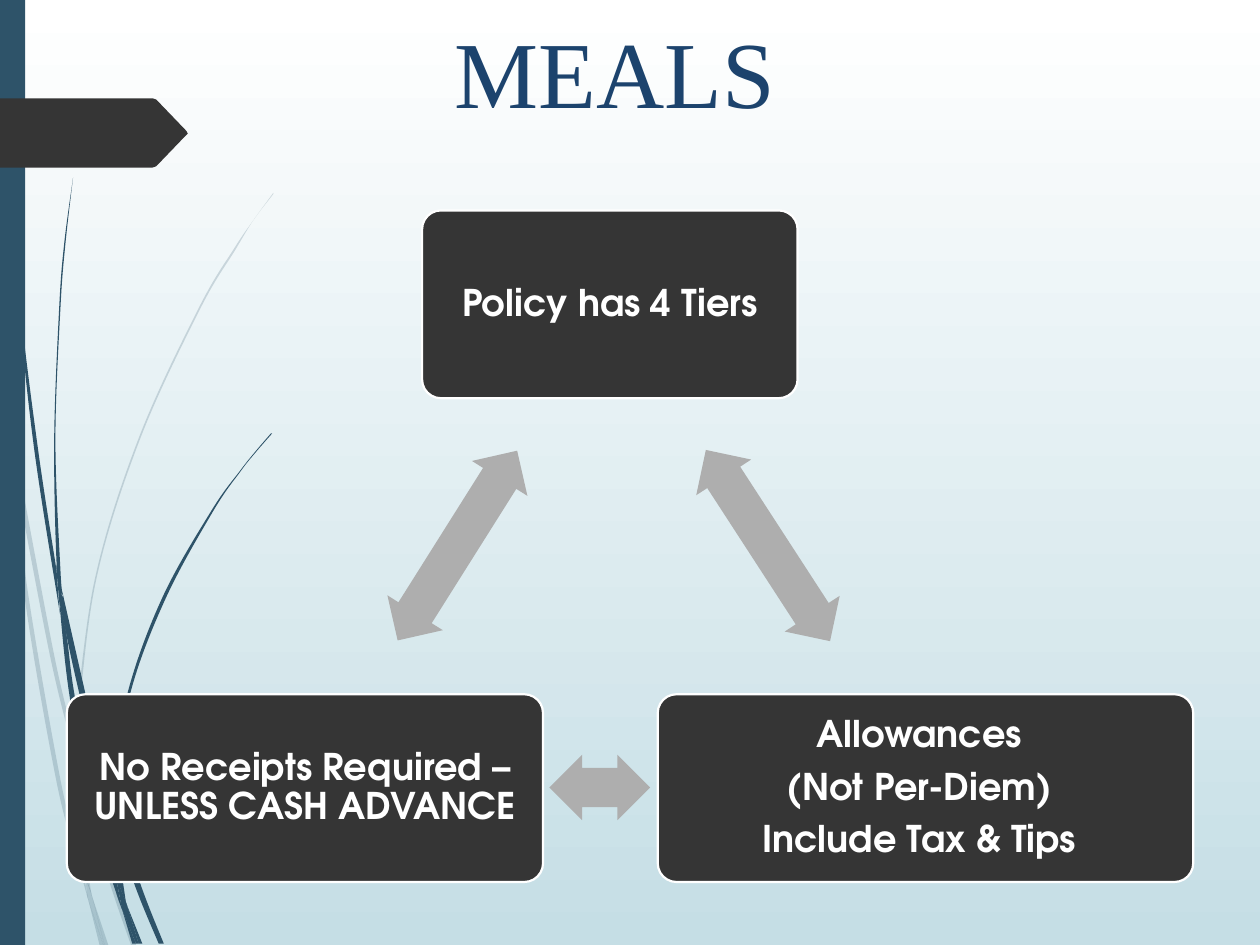
import pptx
import pptx.util
import pptx.dml.color
import pptx.enum.shapes
import pptx.enum.text
import pptx.oxml.ns
from lxml import etree

Inches = pptx.util.Inches
qn = pptx.oxml.ns.qn
SHAPES = pptx.enum.shapes.MSO_SHAPE
ANCHOR = pptx.enum.text.MSO_ANCHOR
CENTER = pptx.enum.text.PP_ALIGN.CENTER

THEME = {
    "teal": "2E5369", "dark": "353535", "arrow": "AEAEAE", "white": "FFFFFF",
    "sky": "C5DEE5", "title": "1C436D",
    "title_font": "Times New Roman", "body_font": "TeX Gyre Adventor",
    "title_size": 54, "body_size": 21, "paragraph_gap": 7.35, "outline": 1.25,
}

TITLE = "MEALS"
BOX_TOP, BOX_HEIGHT, BOX_INSET = 5.51, 1.49, 0.14
BOXES = [
    {"left": 3.35, "top": 1.67, "width": 2.98, "right": BOX_INSET,
     "lines": ["Policy has 4 Tiers"]},
    {"left": 5.22, "top": BOX_TOP, "width": 4.25, "right": BOX_INSET + 0.1,
     "lines": ["Allowances", "(Not Per-Diem)", "Include Tax & Tips"]},
    {"left": 0.53, "top": BOX_TOP, "width": 3.78, "right": BOX_INSET,
     "lines": ["No Receipts Required – UNLESS CASH ADVANCE"]},
]
ARROW_HEIGHT = 0.52
ARROWS = [(5.19, 4.07, 1.81, 57), (4.36, 5.99, 0.8, 180), (2.74, 4.07, 1.78, 302.2)]

PALE_RIBBONS = [
    ([(0.08, 3.5), (0.06, 3.22), (0, 2.82)], [(0, 2.99), (0.07, 3.44), (0.08, 3.5)]),
    ([(0.1, 3.45), (0.43, 5.2), (0.59, 5.86)], [(0.59, 5.99), (0.4, 5.22), (0.12, 3.76)]),
    ([(0.61, 5.96), (0.64, 6.07), (0.88, 6.92), (1.08, 7.5)],
     [(1.04, 7.5), (0.85, 6.94), (0.61, 6.1)]),
    ([(0.83, 7.5), (0.86, 7.5)], [(0.73, 7.11)]),
    ([(0.08, 3.5), (0.12, 3.76), (0.22, 4.69), (0.48, 6.19), (0.64, 6.83), (0.7, 7.14)],
     [(0.64, 6.93), (0.45, 6.21), (0.19, 4.7), (0.08, 3.5)]),
    ([(0.58, 5.99), (0.6, 6.46), (0.64, 6.83), (0.73, 7.11)],
     [(0.72, 7.06), (0.63, 6.46), (0.61, 6.1), (0.58, 5.99)]),
    ([(0.61, 5.96), (0.61, 5.84), (0.76, 4.62), (1.11, 3.49), (1.59, 2.45),
      (1.87, 1.98), (2.01, 1.75), (2.17, 1.54)],
     [(2.17, 1.53), (2.01, 1.75), (1.86, 1.97), (1.58, 2.44), (1.1, 3.48),
      (0.75, 4.61), (0.59, 5.84)]),
    ([(0.7, 7.14), (0.79, 7.5)], [(0.82, 7.5)]),
    ([(0.65, 6.83), (0.69, 7.07), (0.7, 7.14), (0.82, 7.5)],
     [(0.83, 7.5), (0.73, 7.11), (0.67, 6.92), (0.65, 6.83)]),
]
DARK_RIBBONS = [
    ([(0.02, 0), (0.03, 0.48), (0.05, 1.1), (0.14, 2.33), (0.27, 3.55), (0.46, 4.77),
      (0.47, 4.81)],
     [(0.45, 4.53), (0.3, 3.55), (0.15, 2.32), (0.06, 1.09), (0.04, 0.48), (0.03, 0)]),
    ([(0.5, 4.72), (0.53, 5.05), (0.73, 5.92), (0.88, 6.45)],
     [(0.88, 6.31), (0.77, 5.9), (0.5, 4.72)]),
    ([(0.91, 6.41), (0.91, 6.56), (1.09, 7.08), (1.26, 7.49)],
     [(1.3, 7.49), (1.13, 7.06), (0.94, 6.49), (0.91, 6.41)]),
    ([(0.47, 4.77), (0.56, 5.57), (0.77, 6.59), (0.92, 7.08), (0.97, 7.22)],
     [(0.91, 6.91), (0.81, 6.57), (0.6, 5.56), (0.53, 5.05), (0.47, 4.77)]),
    ([(0.5, 4.72), (0.48, 4.53), (0.44, 3.49), (0.48, 2.44), (0.52, 1.93), (0.58, 1.41)],
     [(0.58, 1.41), (0.51, 1.93), (0.47, 2.44), (0.43, 3.49), (0.45, 4.49), (0.49, 4.72)]),
    ([(1.1, 7.49), (1.13, 7.49)], [(1.01, 7.19)]),
    ([(0.47, 4.77), (0.53, 5.05)], [(0.5, 4.72), (0.49, 4.72), (0.45, 4.49), (0.45, 4.53)]),
    ([(0.91, 6.41), (0.91, 6.33), (1.03, 5.52), (1.31, 4.76), (1.69, 4.06),
      (1.91, 3.74), (2.03, 3.59), (2.16, 3.44)],
     [(2.15, 3.44), (2.03, 3.58), (1.91, 3.73), (1.68, 4.05), (1.29, 4.74),
      (1.01, 5.51), (0.88, 6.31)]),
    ([(0.97, 7.22), (1.05, 7.49)], [(1.08, 7.49)]),
    ([(0.88, 6.45), (0.91, 6.91), (0.96, 7.06), (1.01, 7.19)],
     [(1, 7.16), (0.91, 6.56), (0.88, 6.45)]),
    ([(0.91, 6.91), (0.96, 7.17), (0.97, 7.22), (1.08, 7.49)],
     [(1.1, 7.49), (1.01, 7.19), (0.96, 7.06), (0.91, 6.91)]),
]
TAB = [(0, 0.78), (1.21, 0.78), (1.24, 0.79), (1.48, 1.04), (1.49, 1.06), (1.48, 1.07),
       (1.24, 1.32), (1.21, 1.33), (0, 1.33)]


def color(name):
    return pptx.dml.color.RGBColor.from_string(THEME[name])


def paint(shape, fill, outline=None):
    shape.shadow.inherit = False
    shape.fill.solid()
    shape.fill.fore_color.rgb = color(fill)
    if outline:
        shape.line.color.rgb = color(outline)
        shape.line.width = pptx.util.Pt(THEME["outline"])
    else:
        shape.line.fill.background()


def curve_points(points):
    padded = [points[0], *points, points[-1]]
    result = []
    for before, start, end, after in zip(padded, padded[1:], padded[2:], padded[3:]):
        result.append(tuple(b + (c - a) / 6 for a, b, c in zip(before, start, end)))
        result.append(tuple(c - (d - b) / 6 for b, c, d in zip(start, end, after)))
        result.append(end)
    return result


def add_outline(slide, points, fill):
    corners = [(Inches(x), Inches(y)) for x, y in points]
    builder = slide.shapes.build_freeform(*corners[0])
    builder.add_line_segments(corners[1:], close=True)
    shape = builder.convert_to_shape()
    paint(shape, fill)
    return shape


def add_ribbon(slide, side, opposite):
    bridge = [side[-1], opposite[0], opposite[0]]
    points = [side[0], *curve_points(side), *bridge, *curve_points(opposite)]
    shape = add_outline(slide, points, "teal")
    lines = list(shape.element.iter(qn("a:lnTo")))[:len(points) - 1]
    for first, second, third in zip(lines[::3], lines[1::3], lines[2::3]):
        curve = etree.Element(qn("a:cubicBezTo"))
        first.addprevious(curve)
        for line in (first, second, third):
            curve.append(line[0])
            line.getparent().remove(line)
    return shape


def add_ribbons(slide, ribbons, opacity=None):
    for side, opposite in ribbons:
        shape = add_ribbon(slide, side, opposite)
        if opacity:
            tint = shape.element.spPr.find(".//" + qn("a:srgbClr"))
            alpha = etree.SubElement(tint, qn("a:alpha"))
            alpha.set("val", str(opacity * 1000))


def add_shape(slide, kind, left, top, width, height):
    return slide.shapes.add_shape(
        kind, Inches(left), Inches(top), Inches(width), Inches(height))


def set_font(paragraph, role, ink, bold):
    paragraph.alignment = CENTER
    paragraph.font.name = THEME[role + "_font"]
    paragraph.font.size = pptx.util.Pt(THEME[role + "_size"])
    paragraph.font.color.rgb = color(ink)
    paragraph.font.bold = bold


def add_box(slide, box):
    shape = add_shape(slide, SHAPES.ROUNDED_RECTANGLE,
                      box["left"], box["top"], box["width"], BOX_HEIGHT)
    shape.adjustments[0] = 0.1
    paint(shape, "dark", "white")
    frame = shape.text_frame
    frame.word_wrap = True
    frame.vertical_anchor = ANCHOR.MIDDLE
    frame.margin_left = frame.margin_top = frame.margin_bottom = Inches(BOX_INSET)
    frame.margin_right = Inches(box["right"])
    frame.text = "\n".join(box["lines"])
    for paragraph in frame.paragraphs:
        set_font(paragraph, "body", "white", True)
        paragraph.line_spacing = 0.9
        paragraph.space_after = pptx.util.Pt(THEME["paragraph_gap"])


def add_title(slide):
    title = slide.shapes.title
    title.left, title.top, title.width, title.height = map(Inches, (0.38, 0.06, 9, 1.25))
    frame = title.text_frame
    frame.text = TITLE
    frame.vertical_anchor = ANCHOR.TOP
    frame.margin_top = Inches(0.05)
    set_font(frame.paragraphs[0], "title", "title", False)


def main():
    presentation = pptx.Presentation()
    presentation.slide_width, presentation.slide_height = Inches(10), Inches(7.5)
    slide = presentation.slides.add_slide(presentation.slide_layouts[5])
    background = slide.background.fill
    background.gradient()
    background.gradient_angle = 270
    for stop, name in zip(background.gradient_stops, ("white", "sky")):
        stop.color.rgb = color(name)
    add_ribbons(slide, PALE_RIBBONS, opacity=20)
    add_ribbons(slide, DARK_RIBBONS)
    paint(add_shape(slide, SHAPES.RECTANGLE, 0, 0, 0.2, 7.5), "teal")
    add_outline(slide, TAB, "dark")
    add_title(slide)
    for box in BOXES:
        add_box(slide, box)
    for left, top, width, rotation in ARROWS:
        arrow = add_shape(slide, SHAPES.LEFT_RIGHT_ARROW, left, top, width, ARROW_HEIGHT)
        arrow.adjustments[0], arrow.adjustments[1] = 0.6, 0.5
        arrow.rotation = rotation
        paint(arrow, "arrow")
    presentation.save("out.pptx")


if __name__ == "__main__":
    main()
